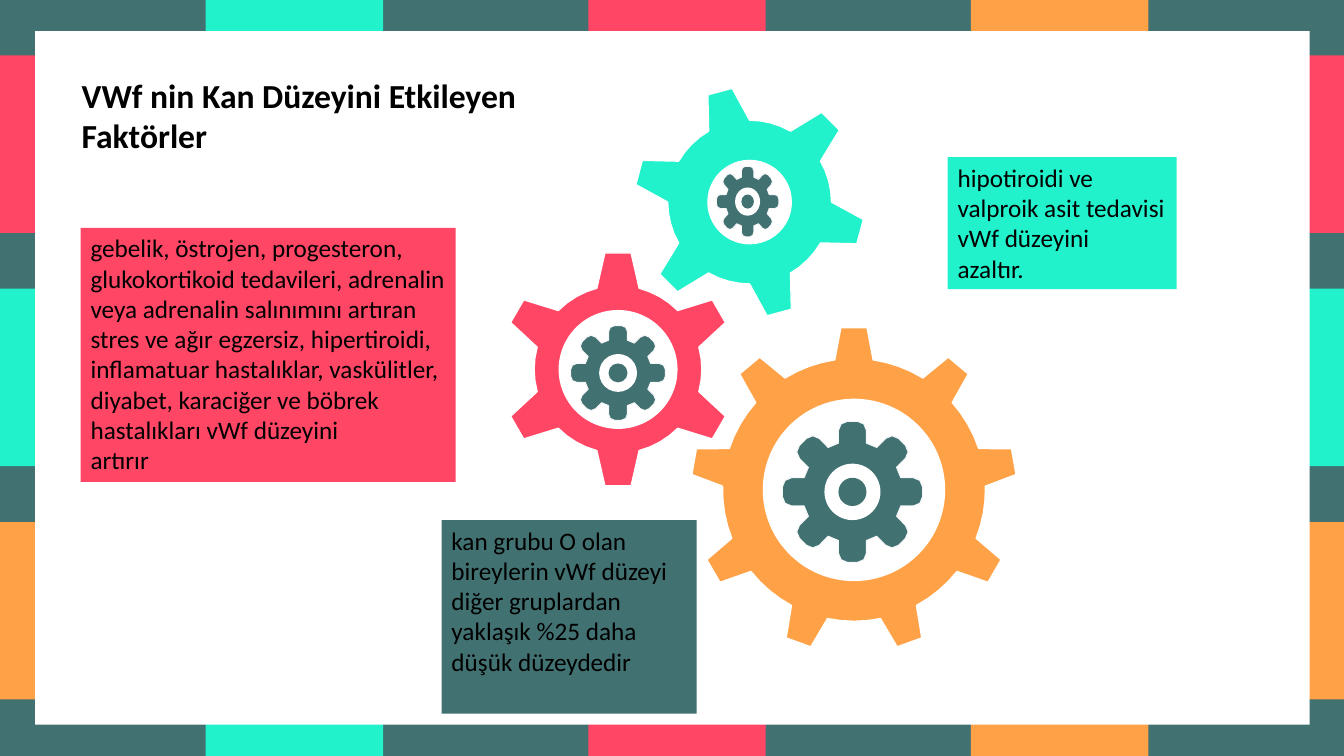
from dataclasses import dataclass
from math import atan2, cos, hypot, pi, radians, sin

from pptx import Presentation
from pptx.dml.color import RGBColor
from pptx.enum.shapes import MSO_SHAPE as Preset
from pptx.enum.text import MSO_ANCHOR as Anchor, MSO_AUTO_SIZE as AutoSize, PP_ALIGN as Align
from pptx.util import Inches, Pt

Point = tuple[float, float]

COLORS = {
    "slate": "427172", "teal": "22F2CC", "red": "FF4664", "orange": "FFA146",
    "white": "FFFFFF", "edge": "F5F6F8", "black": "000000",
}


@dataclass
class Panel:
    left: float
    top: float
    width: float
    height: float
    color: str
    lines: tuple[str, ...] = ()


@dataclass
class Gear:
    x: float
    y: float
    color: str
    teeth: int
    turn: float
    tip: float
    tip_half: float
    base: float
    base_half: float
    hole: float


@dataclass
class Cog:
    x: float
    y: float
    half_width: float
    half_height: float


FRAME = [
    Panel(0, 0, 13.33, 7.5, "slate"),
    *(Panel(0, 0.55 + 2.315 * i, 13.33, 1.76, color)
      for i, color in enumerate(("red", "teal", "orange"))),
    *(Panel(2.04 + 3.795 * i, 0, 1.76, 7.5, color)
      for i, color in enumerate(("teal", "red", "orange"))),
    Panel(0.35, 0.31, 12.64, 6.88, "white"),
]
GEARS = [
    Gear(7.435, 2.005, "teal", 6, -15, 1.135, 0.125, 0.785, 0.21, 0.42),
    Gear(8.47, 4.86, "orange", 9, 0, 1.61, 0.13, 1.29, 0.19, 0.905),
    Gear(6.13, 3.665, "red", 6, 0, 1.155, 0.13, 0.805, 0.21, 0.59),
]
FACTORS = [
    Panel(9.4, 1.56, 2.27, 1.31, "teal",
          ("hipotiroidi ve valproik asit tedavisi vWf düzeyini", "azaltır.")),
    Panel(0.8, 2.26, 3.72, 2.52, "red",
          ("gebelik, östrojen, progesteron, glukokortikoid tedavileri, adrenalin veya "
           "adrenalin salınımını artıran stres ve ağır egzersiz, hipertiroidi, "
           "inflamatuar hastalıklar, vaskülitler, diyabet, karaciğer ve böbrek "
           "hastalıkları vWf düzeyini", "artırır")),
    Panel(4.38, 5.16, 2.53, 1.92, "slate",
          ("kan grubu O olan bireylerin vWf düzeyi diğer gruplardan",
           "yaklaşık %25 daha düşük düzeydedir")),
]
COGS = [
    Cog(8.455, 4.88, 0.695, 0.7),
    Cog(6.13, 3.7, 0.47, 0.47),
    Cog(7.415, 2, 0.31, 0.35),
]


def rgb(name: str) -> RGBColor:
    """Return the named colour."""
    return RGBColor.from_string(COLORS[name])


def paint(shape, color: str, edge: str = "", weight: float = 0) -> None:
    """Fill a shape and outline it when an edge colour is given."""
    shape.shadow.inherit = False
    shape.fill.solid()
    shape.fill.fore_color.rgb = rgb(color)
    if edge:
        shape.line.color.rgb = rgb(edge)
        shape.line.width = Pt(weight)
    else:
        shape.line.fill.background()


def write(shape, *lines: str, size: float = 18, bold: bool = False) -> None:
    """Write one paragraph per line, aligned to the top left."""
    frame = shape.text_frame
    frame.word_wrap = True
    frame.auto_size = AutoSize.NONE
    frame.vertical_anchor = Anchor.TOP
    frame.text = "\n".join(lines)
    for paragraph in frame.paragraphs:
        paragraph.alignment = Align.LEFT
        font = paragraph.font
        font.name, font.size, font.bold = "Calibri", Pt(size), bold
        font.color.rgb = rgb("black")


def draw_panel(shapes, panel: Panel) -> None:
    """Draw a rectangle with its text, if any."""
    box = shapes.add_shape(Preset.RECTANGLE, Inches(panel.left), Inches(panel.top),
                           Inches(panel.width), Inches(panel.height))
    paint(box, panel.color)
    if panel.lines:
        write(box, *panel.lines)


def draw_disc(shapes, x: float, y: float, half_width: float, half_height: float,
              color: str) -> None:
    """Draw an ellipse around a centre."""
    disc = shapes.add_shape(Preset.OVAL, Inches(x - half_width), Inches(y - half_height),
                            Inches(2 * half_width), Inches(2 * half_height))
    paint(disc, color)


def wheel(half_tooth: list[Point], teeth: int, turn: float, arc_steps: int) -> list[Point]:
    """Repeat a tooth around a wheel, joined by arcs, from its (across, out) half profile."""
    tooth = [(-across, out) for across, out in half_tooth] + half_tooth[::-1]
    across, out = half_tooth[0]
    root, flank, pitch = hypot(across, out), atan2(across, out), 2 * pi / teeth
    gap = (pitch - 2 * flank) / arc_steps
    arc = [(root * sin(flank + gap * i), root * cos(flank + gap * i))
           for i in range(1, arc_steps)]
    points = []
    for i in range(teeth):
        angle = radians(turn) + pitch * i
        points += [(a * cos(angle) + o * sin(angle), a * sin(angle) - o * cos(angle))
                   for a, o in tooth + arc]
    return points


def draw_outline(shapes, x: float, y: float, outline: list[Point],
                 x_scale: float = 1, y_scale: float = 1):
    """Draw a closed outline around a centre."""
    placed = [(Inches(x + a * x_scale), Inches(y + b * y_scale)) for a, b in outline]
    builder = shapes.build_freeform(*placed[0])
    builder.add_line_segments(placed[1:], close=True)
    return builder.convert_to_shape()


def draw_gear(shapes, gear: Gear) -> None:
    """Draw a large gear with its white centre."""
    half_tooth = [(gear.base_half, gear.base), (gear.tip_half, gear.tip)]
    rim = draw_outline(shapes, gear.x, gear.y, wheel(half_tooth, gear.teeth, gear.turn, 4))
    paint(rim, gear.color, "white", 1)
    draw_disc(shapes, gear.x, gear.y, gear.hole, gear.hole, "white")


def draw_cog(shapes, cog: Cog) -> None:
    """Draw a small eight-toothed cog with rounded teeth, a hole and a dot."""
    corner = 0.13
    half_tooth = [(0.2, 0.69)] + [(0.2 - corner + corner * cos(t), 1 - corner + corner * sin(t))
                                  for t in (0, pi / 4, pi / 2)]
    rim = draw_outline(shapes, cog.x, cog.y, wheel(half_tooth, 8, 0, 1),
                       cog.half_width, cog.half_height)
    paint(rim, "slate", "edge", 0.75)
    for share, color in ((0.4, "white"), (0.2, "slate")):
        draw_disc(shapes, cog.x, cog.y, share * cog.half_width, share * cog.half_height, color)


def main() -> None:
    """Build the slide and save it."""
    deck = Presentation()
    deck.slide_width, deck.slide_height = Inches(13.33), Inches(7.5)
    slide = deck.slides.add_slide(deck.slide_layouts[5])
    shapes = slide.shapes
    for draw, items in ((draw_panel, FRAME), (draw_gear, GEARS),
                        (draw_panel, FACTORS), (draw_cog, COGS)):
        for item in items:
            draw(shapes, item)
    heading = shapes.title
    heading.left, heading.top = Inches(0.71), Inches(0.69)
    heading.width, heading.height = Inches(5.46), Inches(0.91)
    write(heading, "VWf nin Kan Düzeyini Etkileyen Faktörler", size=24, bold=True)
    shapes.element.append(heading.element)
    deck.save("out.pptx")


if __name__ == "__main__":
    main()
